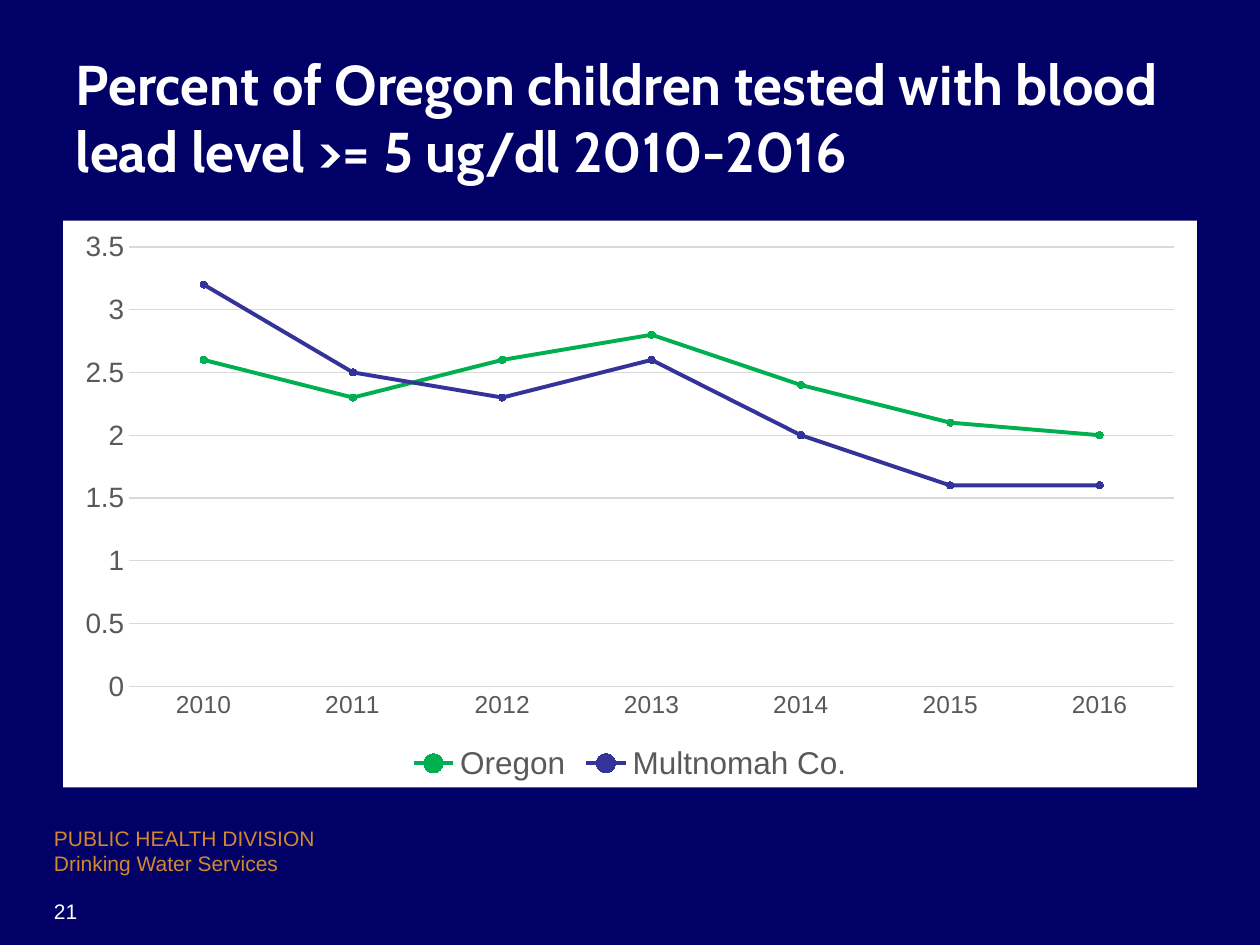
from lxml import etree
from pptx import Presentation
from pptx import util as u
from pptx.chart import data
from pptx.dml.color import RGBColor
from pptx.enum import chart as ch, text
from pptx.oxml import ns

HUES = {"back": "000066", "white": "FFFFFF", "gold": "D5872D", "gray": "595959",
        "grid": "D9D9D9", "green": "00B050", "blue": "333399"}
TITLE = "Percent of Oregon children tested with blood lead level >= 5 ug/dl 2010-2016"
NOTES = [
    ("PUBLIC HEALTH DIVISION\nDrinking Water Services", (0.33, 6.5, 3.83, 0.52), "gold"),
    ("21", (0.33, 7.08, 2.08, 0.33), "white"),
]
YEARS = [str(year) for year in range(2010, 2017)]
RATES = [
    ("Oregon", "green", (2.6, 2.3, 2.6, 2.8, 2.4, 2.1, 2)),
    ("Multnomah Co.", "blue", (3.2, 2.5, 2.3, 2.6, 2, 1.6, 1.6)),
]


def rgb(hue):
    return RGBColor.from_string(HUES[hue])


def style(font, size, hue, face="Arial", bold=False):
    font.size, font.name, font.bold = u.Pt(size), face, bold
    font.color.rgb = rgb(hue)


def paint(line, hue, width):
    line.color.rgb = rgb(hue)
    line.width = u.Pt(width)


def write(shape, words, box, size=12, hue="white", face="Arial", bold=False,
          anchor=text.MSO_ANCHOR.TOP):
    shape.left, shape.top, shape.width, shape.height = map(u.Inches, box)
    frame = shape.text_frame
    frame.word_wrap, frame.auto_size = True, text.MSO_AUTO_SIZE.NONE
    frame.vertical_anchor = anchor
    para = frame.paragraphs[0]
    para.text = words
    para.alignment = text.PP_ALIGN.LEFT
    for run in para.runs:
        style(run.font, size, hue, face, bold)


def fill(chart, hue):
    area = etree.Element(ns.qn("c:spPr"))
    solid = etree.SubElement(area, ns.qn("a:solidFill"))
    etree.SubElement(solid, ns.qn("a:srgbClr"), val=HUES[hue])
    line = etree.SubElement(area, ns.qn("a:ln"))
    etree.SubElement(line, ns.qn("a:noFill"))
    chart.element.find(ns.qn("c:chart")).addnext(area)


def plot(slide):
    table = data.CategoryChartData(number_format="General")
    table.categories = YEARS
    for name, _, rates in RATES:
        table.add_series(name, rates)
    box = map(u.Inches, (0.5, 1.75, 9, 4.5))
    chart = slide.shapes.add_chart(ch.XL_CHART_TYPE.LINE_MARKERS, *box, table).chart
    style(chart.font, 10, "gray")
    fill(chart, "white")
    chart.has_title = False
    chart.has_legend = True
    chart.legend.position = ch.XL_LEGEND_POSITION.BOTTOM
    chart.legend.include_in_layout = False
    style(chart.legend.font, 18, "gray")
    for axis, size in ((chart.category_axis, 14), (chart.value_axis, 16)):
        axis.major_tick_mark = axis.minor_tick_mark = ch.XL_TICK_MARK.NONE
        style(axis.tick_labels.font, size, "gray")
    paint(chart.category_axis.format.line, "grid", 0.75)
    chart.value_axis.format.line.fill.background()
    paint(chart.value_axis.major_gridlines.format.line, "grid", 0.75)
    chart.plots[0].vary_by_categories = False
    for line, (_, hue, _) in zip(chart.plots[0].series, RATES):
        line.smooth = False
        paint(line.format.line, hue, 2.25)
        mark = line.marker
        mark.style, mark.size = ch.XL_MARKER_STYLE.CIRCLE, 4
        mark.format.fill.solid()
        mark.format.fill.fore_color.rgb = rgb(hue)
        paint(mark.format.line, hue, 0.75)


def main():
    deck = Presentation()
    deck.slide_width, deck.slide_height = u.Inches(10), u.Inches(7.5)
    slide = deck.slides.add_slide(deck.slide_layouts[5])
    slide.background.fill.solid()
    slide.background.fill.fore_color.rgb = rgb("back")
    write(slide.shapes.title, TITLE, (0.5, 0.3, 9, 1.25), size=32, face="Cabin",
          bold=True, anchor=text.MSO_ANCHOR.MIDDLE)
    for words, box, hue in NOTES:
        write(slide.shapes.add_textbox(0, 0, 0, 0), words, box, hue=hue)
    plot(slide)
    deck.save("out.pptx")


if __name__ == "__main__":
    main()
